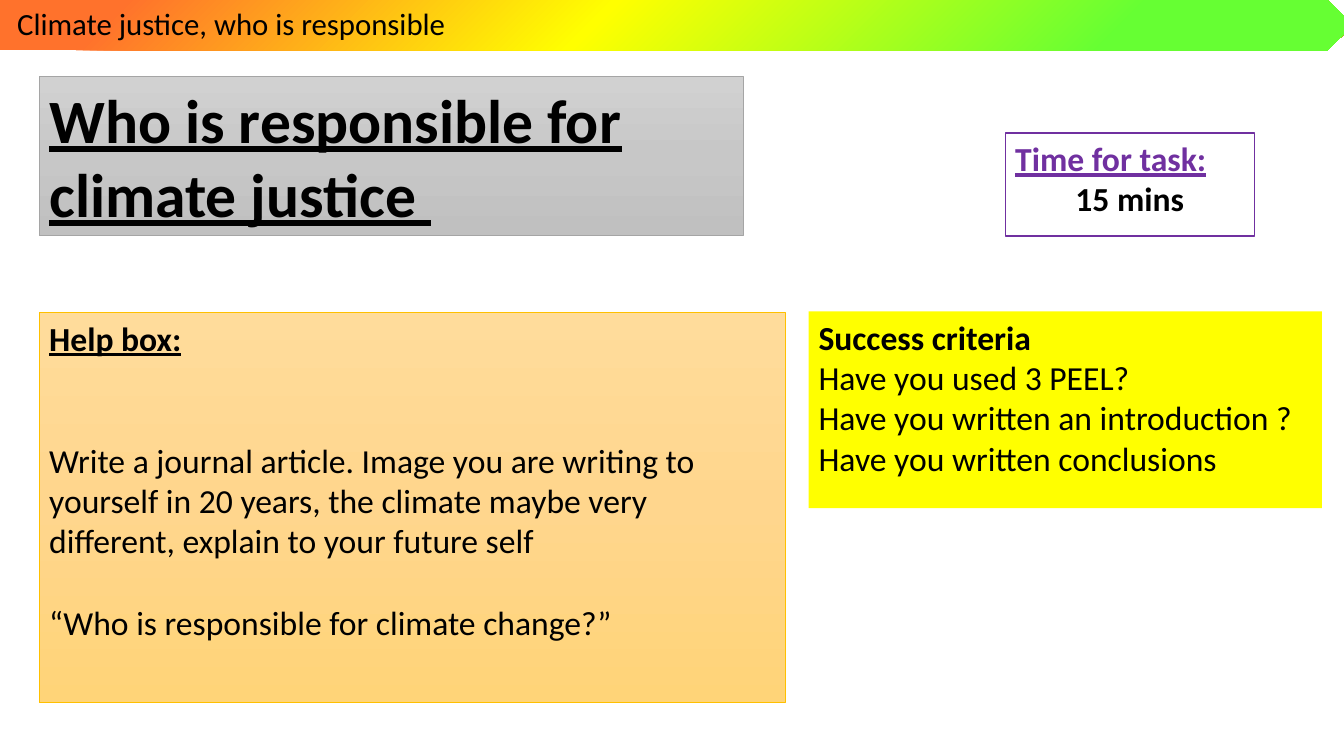
import pptx
import pptx.dml.color
import pptx.enum.shapes
import pptx.enum.text
import pptx.oxml
import pptx.oxml.ns
import pptx.util
from pptx.util import Inches

LEFT = pptx.enum.text.PP_ALIGN.LEFT
CENTER = pptx.enum.text.PP_ALIGN.CENTER
SHAPES = pptx.enum.shapes.MSO_SHAPE


def color(hex_code):
    return pptx.dml.color.RGBColor.from_string(hex_code)


def write(para, text, size=24, ink="000000", bold=False, underline=False,
          align=LEFT, before=0):
    para.alignment = align
    para.space_before = pptx.util.Pt(before)
    span = para.add_run()
    span.text = text
    span.font.name = "Calibri"
    span.font.size = pptx.util.Pt(size)
    span.font.bold = bold
    span.font.underline = underline
    span.font.color.rgb = color(ink)


def set_gradient(box, stops, direction):
    """Fill with (percent, hex) stops; direction is the XML after the stops."""
    box.fill.background()
    marks = "".join(
        f'<a:gs pos="{percent * 1000}"><a:srgbClr val="{code}"/></a:gs>'
        for percent, code in stops)
    gradient = pptx.oxml.parse_xml(
        f'<a:gradFill {pptx.oxml.ns.nsdecls("a")} rotWithShape="1">'
        f"<a:gsLst>{marks}</a:gsLst>{direction}</a:gradFill>")
    properties = box._element.spPr
    properties.replace(properties.find(pptx.oxml.ns.qn("a:noFill")), gradient)


class LessonSlide:
    downward = '<a:lin ang="5400000" scaled="0"/>'
    from_corner = ('<a:path path="circle">'
                   '<a:fillToRect l="100000" t="100000"/></a:path>')

    def __init__(self, deck):
        self.page = deck.slides.add_slide(deck.slide_layouts[5])

    def style(self, box, fill, line, line_width, lines, direction=downward,
              left_inset=0.1):
        if isinstance(fill, str):
            box.fill.solid()
            box.fill.fore_color.rgb = color(fill)
        else:
            set_gradient(box, fill, direction)
        if line:
            box.line.color.rgb = color(line)
            box.line.width = pptx.util.Pt(line_width)
        else:
            box.line.fill.background()
        frame = box.text_frame
        frame.word_wrap = True
        frame.auto_size = pptx.enum.text.MSO_AUTO_SIZE.NONE
        frame.vertical_anchor = pptx.enum.text.MSO_ANCHOR.TOP
        frame.margin_left, frame.margin_right = Inches(left_inset), Inches(0.1)
        frame.margin_top = frame.margin_bottom = Inches(0.05)
        for index, (text, form) in enumerate(lines):
            para = frame.add_paragraph() if index else frame.paragraphs[0]
            write(para, text, **form)

    def title(self, place, text, fill, line):
        box = self.page.shapes.title
        box.left, box.top, box.width, box.height = map(Inches, place)
        self.style(box, fill, line, 0.75,
                   [(text, dict(size=44, bold=True, underline=True))])

    def panel(self, place, lines, fill, line=None, line_width=0.75):
        box = self.page.shapes.add_shape(SHAPES.RECTANGLE, *map(Inches, place))
        box.shadow.inherit = False
        self.style(box, fill, line, line_width, lines)

    def banner(self, place, text, fill):
        box = self.page.shapes.add_shape(SHAPES.RIGHT_ARROW, *map(Inches, place))
        box.shadow.inherit = False
        box.adjustments[0], box.adjustments[1] = 1, 0.51
        self.style(box, fill, None, 0, [(text, dict(size=22))],
                   self.from_corner, left_inset=0.17)


def main():
    deck = pptx.Presentation()
    deck.slide_width, deck.slide_height = Inches(13.33), Inches(7.5)
    lesson = LessonSlide(deck)
    heading = dict(bold=True, underline=True)

    # Title
    lesson.title((0.39, 0.76, 6.98, 1.58),
                 "Who is responsible for climate justice ",
                 [(0, "D1D1D1"), (50, "C7C7C7"), (100, "C0C0C0")], "A5A5A5")

    # Help box
    lesson.panel((0.39, 3.1, 7.4, 3.87), [
        ("Help box:", heading),
        ("Write a journal article. Image you are writing to yourself in 20 "
         "years, the climate maybe very different, explain to your future self",
         dict(before=58.5)),
        ("“Who is responsible for climate change?”", dict(before=29.25)),
    ], [(0, "FFDC9B"), (50, "FFD68D"), (100, "FFD478")], "FFC000")

    # Time for the task
    lesson.panel((9.97, 1.32, 2.47, 1.02), [
        ("Time for task:", dict(heading, ink="7030A0")),
        ("15 mins", dict(bold=True, align=CENTER)),
    ], "FFFFFF", "7030A0", 1)

    # Success criteria
    lesson.panel((8.02, 3.09, 5.09, 1.95), [
        ("Success criteria", dict(bold=True)),
        ("Have you used 3 PEEL?", {}),
        ("Have you written an introduction ?", {}),
        ("Have you written conclusions", {}),
    ], "FFFF00")

    # Topic banner
    lesson.banner((0, 0, 13.42, 0.5), "Climate justice, who is responsible",
                  [(0, "66FF33"), (18, "66FF33"), (56, "FFFF00"),
                   (91, "FF722C"), (100, "FF722C")])

    deck.save("out.pptx")


if __name__ == "__main__":
    main()
